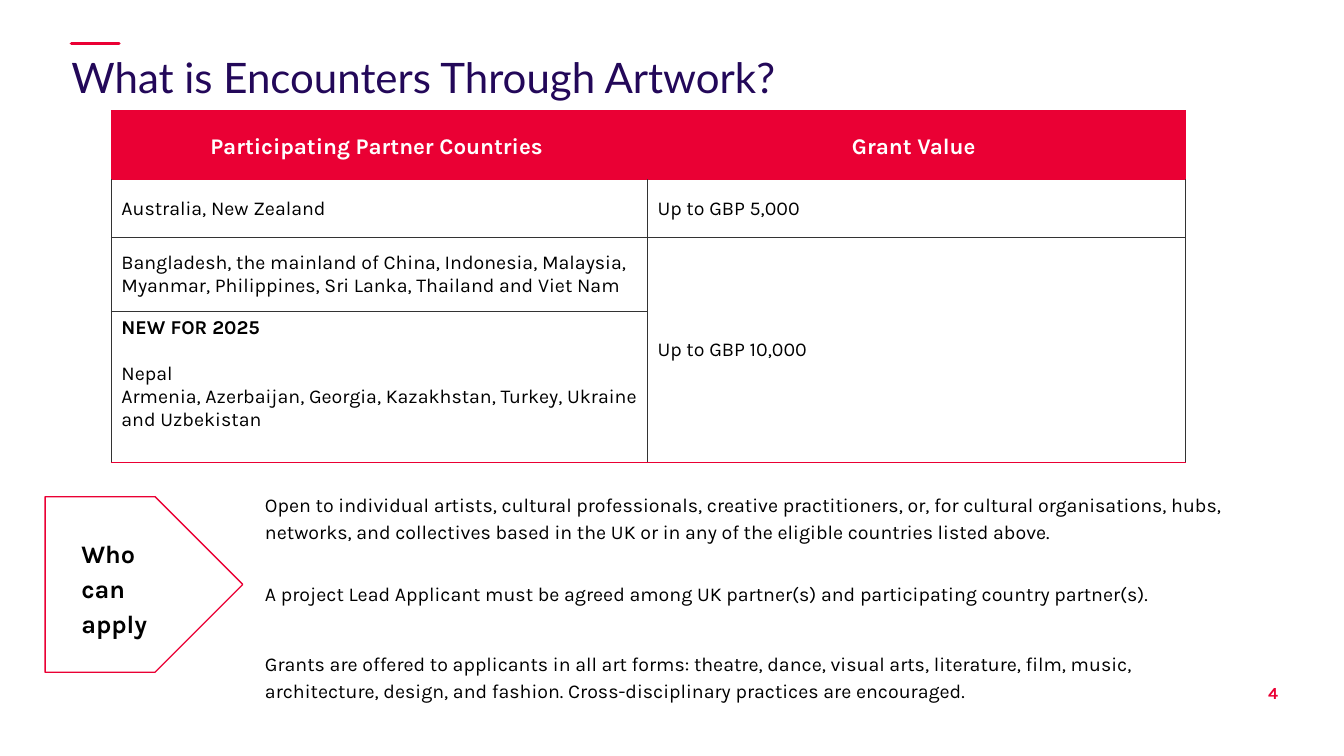
from dataclasses import dataclass

from lxml import etree
from pptx import Presentation
from pptx import util as u
from pptx.dml.color import RGBColor
from pptx.enum import shapes, text
from pptx.oxml import ns

Pt = u.Pt
RED = RGBColor(0xEA, 0x00, 0x34)
NAVY = RGBColor(0x23, 0x08, 0x59)
BLACK = RGBColor(0, 0, 0)
GREY = RGBColor(0x33, 0x33, 0x33)
WHITE = RGBColor(0xFF, 0xFF, 0xFF)
LEFT, CENTER, RIGHT = text.PP_ALIGN.LEFT, text.PP_ALIGN.CENTER, text.PP_ALIGN.RIGHT
TOP, MIDDLE, BOTTOM = (text.MSO_ANCHOR.TOP, text.MSO_ANCHOR.MIDDLE,
                       text.MSO_ANCHOR.BOTTOM)


@dataclass
class Para:
    words: str
    size: float = 14
    bold: bool = False
    color: RGBColor = BLACK
    align: text.PP_ALIGN = LEFT
    spacing: float = 1.0
    before: float = 0
    after: float = 0


@dataclass
class Label:
    left: float
    top: float
    width: float
    height: float
    paras: list[Para]
    anchor: text.MSO_ANCHOR = TOP
    inset: bool = True


@dataclass
class TableCell:
    row: int
    column: int
    paras: list[Para]
    anchor: text.MSO_ANCHOR = MIDDLE


def write(frame, paras: list[Para]) -> None:
    for index, item in enumerate(paras):
        para = frame.add_paragraph() if index else frame.paragraphs[0]
        para.text = item.words
        para.alignment = item.align
        para.line_spacing = item.spacing
        para.space_before, para.space_after = Pt(item.before), Pt(item.after)
        para.font.name, para.font.size = "Karla", Pt(item.size)
        para.font.bold = item.bold
        para.font.color.rgb = item.color


def clear_margins(frame) -> None:
    frame.margin_left = frame.margin_top = 0
    frame.margin_right = frame.margin_bottom = 0


def add_label(page, label: Label) -> None:
    box = page.shapes.add_textbox(Pt(label.left), Pt(label.top),
                                  Pt(label.width), Pt(label.height))
    frame = box.text_frame
    frame.word_wrap = True
    frame.vertical_anchor = label.anchor
    if not label.inset:
        clear_margins(frame)
    write(frame, label.paras)


def set_border(cell, colors: dict[str, RGBColor], points: float) -> None:
    properties = cell._tc.get_or_add_tcPr()
    for index, (side, color) in enumerate(colors.items()):
        line = etree.Element(ns.qn(f"a:ln{side}"), w=str(Pt(points)))
        fill = etree.SubElement(line, ns.qn("a:solidFill"))
        etree.SubElement(fill, ns.qn("a:srgbClr"), val=str(color))
        properties.insert(index, line)


def header(words: str) -> list[Para]:
    return [Para(words, 16, True, WHITE, CENTER, 1.15, after=6)]


GRANT_CELLS = [
    TableCell(0, 0, header("Participating Partner Countries ")),
    TableCell(0, 1, header("Grant Value ")),
    TableCell(1, 0, [Para("Australia, New Zealand")]),
    TableCell(1, 1, [Para("Up to GBP 5,000")]),
    TableCell(2, 0, [Para("Bangladesh, the mainland of China, Indonesia, Malaysia, "
                          "Myanmar, Philippines, Sri Lanka, Thailand and Viet Nam")]),
    TableCell(2, 1, [Para("Up to GBP 10,000")]),
    TableCell(3, 0, [
        Para("NEW FOR 2025", bold=True),
        Para("Nepal", before=16.5),
        Para("Armenia, Azerbaijan, Georgia, Kazakhstan, Turkey, Ukraine "
             "and Uzbekistan"),
    ], TOP),
]
COLUMN_WIDTHS = [383, 384.5]
ROW_HEIGHTS = [49.5, 41, 53, 108]

LABELS = [
    Label(51, 377.8, 85, 80, [Para("Who can apply", 18, True, spacing=1.15, after=6)]),
    Label(182.2, 346.2, 701.3, 160, [
        Para("Open to individual artists, cultural professionals, creative "
             "practitioners, or, for cultural organisations, hubs, networks, and "
             "collectives based in the UK or in any of the eligible countries "
             "listed above.", spacing=1.15, after=24.5),
        Para("A project Lead Applicant must be agreed among UK partner(s) and "
             "participating country partner(s).", spacing=1.15, after=31),
        Para("Grants are offered to applicants in all art forms: theatre, dance, "
             "visual arts, literature, film, music, architecture, design, and "
             "fashion. Cross-disciplinary practices are encouraged.", spacing=1.15),
    ]),
    Label(873.4, 487.4, 39.6, 14.4, [Para("4", 12, True, RED, RIGHT)], BOTTOM, False),
]


def add_title(page) -> None:
    title = page.shapes.title
    title.left, title.top, title.width, title.height = map(Pt, (51, 39.6, 862, 62.6))
    frame = title.text_frame
    clear_margins(frame)
    frame.vertical_anchor = TOP
    frame.auto_size = text.MSO_AUTO_SIZE.NONE
    frame.text = "What is Encounters Through Artwork?"
    para = frame.paragraphs[0]
    para.alignment = LEFT
    para.line_spacing = Pt(33)
    para.font.name, para.font.size = "Lato", Pt(30)
    para.font.color.rgb = NAVY


def add_accent(page) -> None:
    accent = page.shapes.add_connector(shapes.MSO_CONNECTOR.STRAIGHT,
                                       Pt(51), Pt(31), Pt(85), Pt(31))
    accent.line.color.rgb = RED
    accent.line.width = Pt(2.4)
    accent.line._get_or_add_ln().set("cap", "rnd")
    etree.SubElement(accent._element.spPr, ns.qn("a:effectLst"))


def add_grant_table(page) -> None:
    table = page.shapes.add_table(
        len(ROW_HEIGHTS), len(COLUMN_WIDTHS), Pt(79.5), Pt(79),
        Pt(sum(COLUMN_WIDTHS)), Pt(sum(ROW_HEIGHTS))).table
    table.first_row = table.horz_banding = False
    for column, width in zip(table.columns, COLUMN_WIDTHS):
        column.width = Pt(width)
    last = len(ROW_HEIGHTS) - 1
    table.cell(2, 1).merge(table.cell(last, 1))
    for index, height in enumerate(ROW_HEIGHTS):
        table.rows[index].height = Pt(height)
        side = RED if index == 0 else GREY
        top = RED if index <= 1 else GREY
        for cell in table.rows[index].cells:
            if index == 0:
                cell.fill.solid()
                cell.fill.fore_color.rgb = RED
            else:
                cell.fill.background()
            bottom = RED if index in (0, last) or cell.is_merge_origin else GREY
            set_border(cell, {"L": side, "R": side, "T": top, "B": bottom}, 0.75)
    for item in GRANT_CELLS:
        cell = table.cell(item.row, item.column)
        cell.vertical_anchor = item.anchor
        write(cell.text_frame, item.paras)


def add_pointer(page) -> None:
    pointer = page.shapes.add_shape(shapes.MSO_SHAPE.PENTAGON,
                                    Pt(32.2), Pt(354.8), Pt(141.2), Pt(125.4))
    pointer.shadow.inherit = False
    pointer.fill.background()
    pointer.line.color.rgb = RED
    pointer.line.width = Pt(1)


def main() -> None:
    deck = Presentation()
    deck.slide_width, deck.slide_height = Pt(960), Pt(540)
    page = deck.slides.add_slide(deck.slide_layouts.get_by_name("Title Only"))

    # Heading
    add_accent(page)
    add_title(page)

    # Countries and grants
    add_grant_table(page)

    # Eligibility and page number
    add_pointer(page)
    for label in LABELS:
        add_label(page, label)

    deck.save("out.pptx")


if __name__ == "__main__":
    main()
